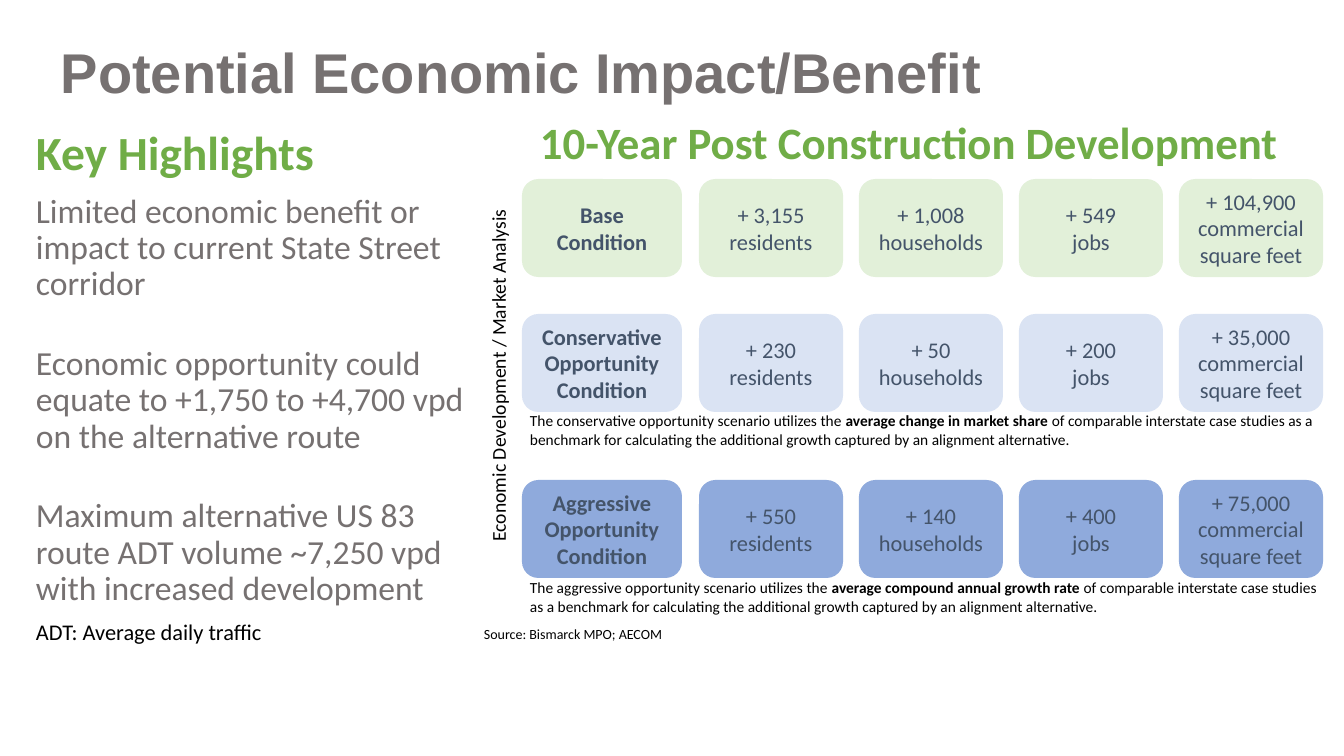
from pptx import Presentation
from pptx.dml.color import RGBColor
from pptx.enum.shapes import MSO_SHAPE
from pptx.enum.text import MSO_ANCHOR, PP_ALIGN
from pptx.util import Emu, Pt

ROUND = MSO_SHAPE.ROUNDED_RECTANGLE
TOP, MIDDLE = MSO_ANCHOR.TOP, MSO_ANCHOR.MIDDLE
CENTER = PP_ALIGN.CENTER
GRAY = RGBColor(0x76, 0x71, 0x71)
GREEN = RGBColor(0x70, 0xAD, 0x47)
SLATE = RGBColor(0x44, 0x54, 0x6A)
BLACK = RGBColor(0, 0, 0)
MINT = RGBColor(0xE2, 0xF0, 0xD9)
PALE = RGBColor(0xDA, 0xE3, 0xF3)
BLUE = RGBColor(0x8F, 0xAA, 0xDC)


def px(*lengths):
    return [Emu(round(n * 914400 / 100.8)) for n in lengths]


def add_text(box, text, size, color, bold=False, face="Calibri", inset=True):
    frame = box.text_frame
    frame.word_wrap = True
    frame.text = text
    frame.vertical_anchor = TOP if inset else MIDDLE
    if not inset:
        frame.margin_left = frame.margin_right = 0
        frame.margin_top = frame.margin_bottom = 0
    for para in frame.paragraphs:
        if inset:
            para.line_spacing = 0.9
        for run in para.runs:
            run.font.name = face
            run.font.size = Pt(size)
            run.font.bold = bold
            run.font.color.rgb = color
    return frame


deck = Presentation()
deck.slide_width, deck.slide_height = px(1344, 756)
slide = deck.slides.add_slide(deck.slide_layouts[6])
shapes = slide.shapes

# Headings
title = shapes.add_textbox(*px(51, 40, 1240, 123))
add_text(title, "Potential Economic Impact/Benefit", 40, GRAY, True, "Arial")
head = shapes.add_textbox(*px(530, 116, 777, 63))
add_text(head, "10-Year Post Construction Development", 32, GREEN, True)

# Key highlights: text, size, colour, space before
points = [
    ("Key Highlights", 34, GREEN, 0),
    ("Limited economic benefit or impact to current State Street corridor", 24, GRAY, 10),
    ("Economic opportunity could equate to +1,750 to +4,700 vpd on the alternative route",
     24, GRAY, 31),
    ("Maximum alternative US 83 route ADT volume ~7,250 vpd with increased development",
     24, GRAY, 31),
    ("ADT: Average daily traffic", 16, BLACK, 10),
]
panel = shapes.add_textbox(*px(26, 124, 448, 548))
frame = add_text(panel, "\n".join(point[0] for point in points), 24, GRAY)
for para, (text, size, color, gap) in zip(frame.paragraphs, points):
    para.space_before = Pt(gap)
    para.runs[0].font.size = Pt(size)
    para.runs[0].font.color.rgb = color
frame.paragraphs[0].runs[0].font.bold = True

# Scenario grid: top, fill, cell texts
rows = [
    (179, MINT, ["Base\nCondition", "+ 3,155 residents", "+ 1,008 households",
                 "+ 549\njobs", "+ 104,900 commercial square feet"]),
    (314, PALE, ["Conservative Opportunity\nCondition", "+ 230 residents",
                 "+ 50 households", "+ 200\njobs", "+ 35,000 commercial square feet"]),
    (480, BLUE, ["Aggressive Opportunity Condition", "+ 550 residents",
                 "+ 140 households", "+ 400\njobs", "+ 75,000 commercial square feet"]),
]
for top, fill, cells in rows:
    for col, text in enumerate(cells):
        left, width = (699 + 160 * (col - 1), 144) if col else (522, 160)
        card = shapes.add_shape(ROUND, *px(left, top, width, 98))
        card.shadow.inherit = False
        card.fill.solid()
        card.fill.fore_color.rgb = fill
        card.line.fill.background()
        frame = add_text(card, text, 16, SLATE, bold=col == 0)
        frame.vertical_anchor = MIDDLE
        for para in frame.paragraphs:
            para.alignment = CENTER
            para.line_spacing = 1.0

# Scenario notes
tail = ("of comparable interstate case studies as a benchmark for calculating "
        "the additional growth captured by an alignment alternative.")
notes = [
    (406, "conservative", "average change in market share "),
    (573, "aggressive", "average compound annual growth rate "),
]
for top, name, measure in notes:
    note = shapes.add_textbox(*px(530, top, 793, 48))
    lead = f"The {name} opportunity scenario utilizes the "
    frame = add_text(note, lead, 11, BLACK, inset=False)
    for text, bold in ((measure, True), (tail, False)):
        run = frame.paragraphs[0].add_run()
        run.text = text
        run.font.name = "Calibri"
        run.font.size = Pt(11)
        run.font.bold = bold
        run.font.color.rgb = BLACK

# Side label and source
side = shapes.add_textbox(*px(319, 340, 358, 45))
side.rotation = 270
add_text(side, "Economic Development / Market Analysis", 14, BLACK, inset=False)
source = shapes.add_textbox(*px(484, 618, 397, 32))
add_text(source, "Source: Bismarck MPO; AECOM", 10, BLACK, inset=False)

deck.save("out.pptx")
